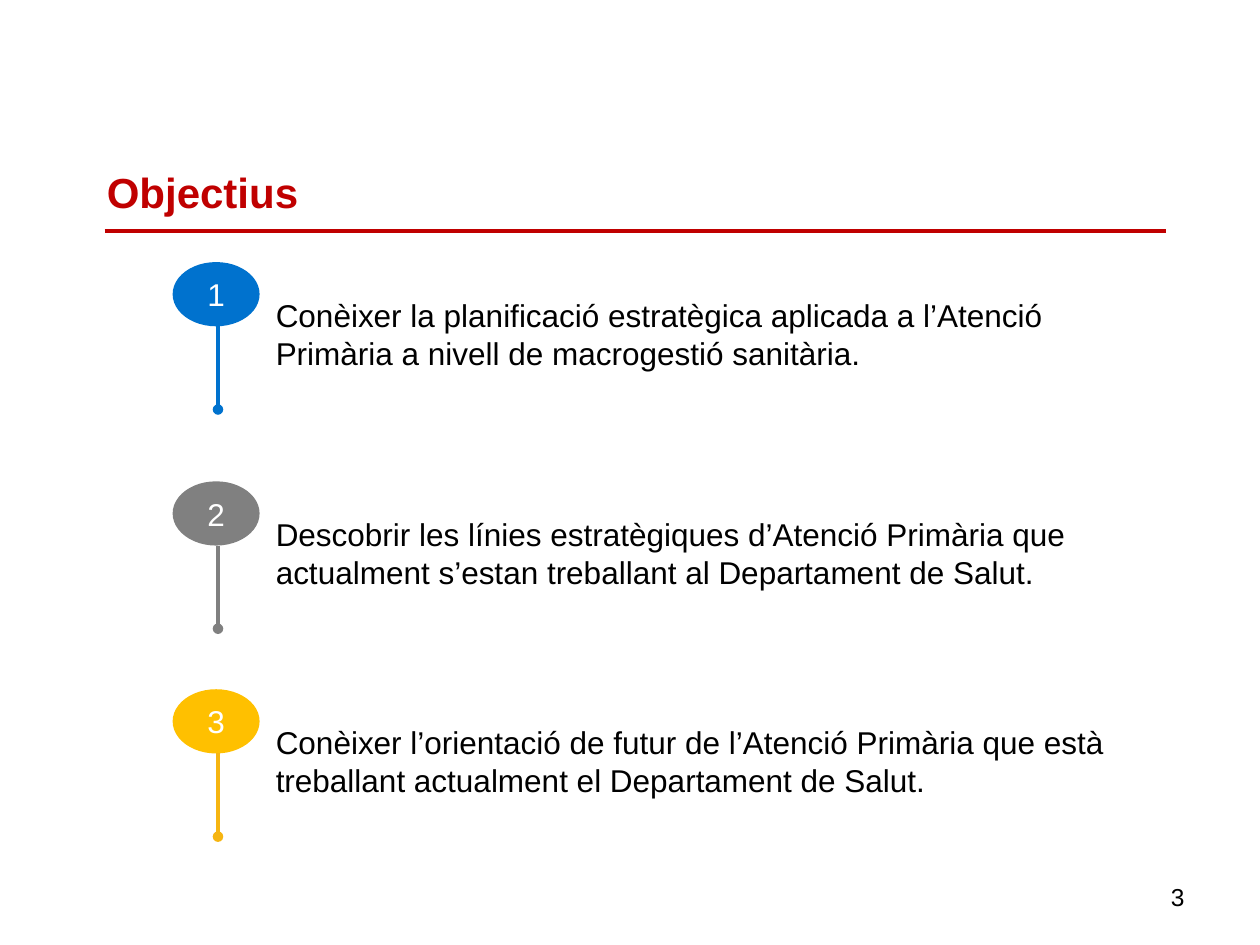
from lxml import etree
from pptx import Presentation
from pptx.dml.color import RGBColor
from pptx.enum.shapes import MSO_CONNECTOR as Conn, MSO_SHAPE as Shape
from pptx.enum.text import MSO_ANCHOR as Anchor, PP_ALIGN as Align
from pptx.oxml.ns import qn
from pptx.util import Inches, Pt

RED = RGBColor(0xC0, 0x00, 0x00)
BLUE = RGBColor(0x00, 0x72, 0xCE)
GRAY = RGBColor(0x80, 0x80, 0x80)
GOLD = RGBColor(0xFF, 0xC0, 0x00)
AMBER = RGBColor(0xF6, 0xB5, 0x11)
BLACK = RGBColor(0x00, 0x00, 0x00)
WHITE = RGBColor(0xFF, 0xFF, 0xFF)


class Deck:
    font = "Arial"

    def __init__(self, slide):
        self.slide = slide

    def label(self, shape, text, size, color, align=Align.LEFT,
              anchor=Anchor.TOP, bold=False):
        frame = shape.text_frame
        frame.word_wrap = True
        frame.vertical_anchor = anchor
        para = frame.paragraphs[0]
        para.text = text
        para.alignment = align
        font = para.font
        font.name, font.size, font.bold = self.font, Pt(size), bold
        font.color.rgb = color

    def text(self, box, text, size, color, home=None, **style):
        home = home or self.slide.shapes
        shape = home.add_textbox(*map(Inches, box))
        self.label(shape, text, size, color, **style)

    def line(self, start, end, color, width, home=None, dot=False):
        home = home or self.slide.shapes
        line = home.add_connector(Conn.STRAIGHT, *map(Inches, start + end))
        line.line.color.rgb = color
        line.line.width = Pt(width)
        props = line._element.spPr
        if dot:
            head = etree.SubElement(props.find(qn("a:ln")), qn("a:headEnd"))
            head.set("type", "oval")
        etree.SubElement(props, qn("a:effectLst"))

    def badge(self, box, text, color, home):
        shape = home.add_shape(Shape.OVAL, *map(Inches, box))
        shape.shadow.inherit = False
        shape.fill.solid()
        shape.fill.fore_color.rgb = color
        shape.line.fill.background()
        self.label(shape, text, 18, WHITE, Align.CENTER, Anchor.MIDDLE)

    def goal(self, top, num, text, fill, stem, width):
        home = self.slide.shapes.add_group_shape().shapes
        self.badge((1.37, top, 0.69, 0.51), str(num), fill, home)
        self.line((1.73, top + 1.17), (1.73, top + 0.51), stem, 2, home, dot=True)
        self.text((2.09, top + 0.22, width, 0.71), text, 18, BLACK, home)


def main():
    prs = Presentation()
    prs.slide_width, prs.slide_height = Inches(10), Inches(7.5)
    deck = Deck(prs.slides.add_slide(prs.slide_layouts[6]))

    # Title and rule
    deck.line((0.83, 1.83), (9.25, 1.83), RED, 2.25)
    deck.text((0.75, 0.67, 8.5, 1.1), "Objectius", 24, RED,
              anchor=Anchor.BOTTOM, bold=True)

    # Numbered goals: top, text, badge colour, stem colour, text width
    goals = [
        (2.08, "Conèixer la planificació estratègica aplicada a l’Atenció "
         "Primària a nivell de macrogestió sanitària.", BLUE, BLUE, 6.92),
        (3.82, "Descobrir les línies estratègiques d’Atenció Primària que "
         "actualment s’estan treballant al Departament de Salut.",
         GRAY, GRAY, 6.92),
        (5.47, "Conèixer l’orientació de futur de l’Atenció Primària que està "
         "treballant actualment el Departament de Salut.", GOLD, AMBER, 6.98),
    ]
    for num, (top, *rest) in enumerate(goals, 1):
        deck.goal(top, num, *rest)

    # Page number
    deck.text((7.17, 6.95, 2.33, 0.4), "3", 14, BLACK, align=Align.RIGHT)

    prs.save("out.pptx")


if __name__ == "__main__":
    main()
